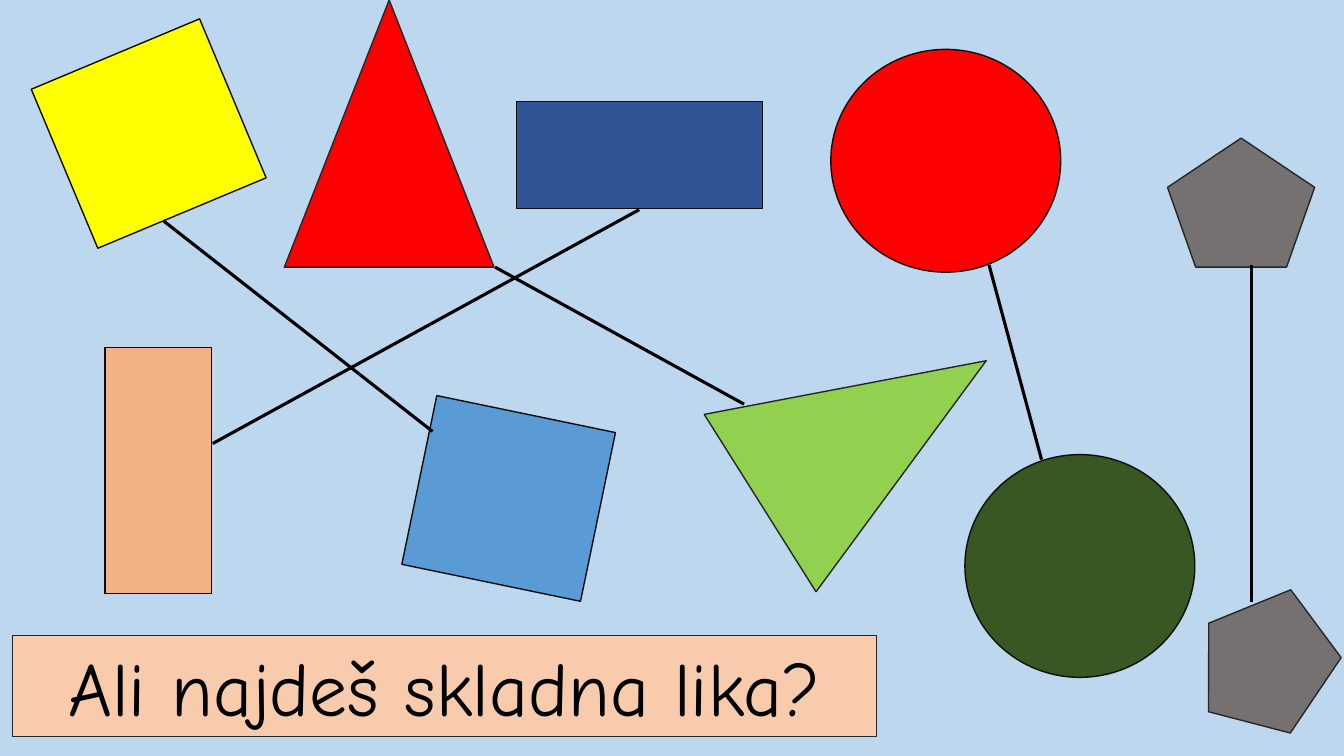
from pptx import Presentation, util as u
from pptx.dml.color import RGBColor
from pptx.enum import shapes, text
from pptx.oxml.ns import qn
from lxml import etree

INK, EDGE, SOFT = "000000", "0D0D0D", "262626"
KIND = shapes.MSO_SHAPE


def paint(fmt, color):
    """Give a fill, or the fill of a line, one solid hex colour."""
    fmt.solid()
    fmt.fore_color.rgb = RGBColor.from_string(color)


def write(frame, words, font="Comic Neue", size=54, color=INK):
    frame.word_wrap = False
    frame.auto_size = text.MSO_AUTO_SIZE.NONE
    frame.vertical_anchor = text.MSO_ANCHOR.MIDDLE
    par = frame.paragraphs[0]
    par.alignment = text.PP_ALIGN.CENTER
    run = par.add_run()
    run.text = words
    run.font.name, run.font.size = font, u.Pt(size)
    paint(run.font.fill, color)


class Board:
    """Holds the slide and draws its figures in one style."""

    def __init__(self, deck, back):
        self.slide = deck.slides.add_slide(deck.slide_layouts[5])
        paint(self.slide.background.fill, back)

    def style(self, shape, fill, edge, width):
        paint(shape.fill, fill)
        paint(shape.line.fill, edge)
        shape.line.width = u.Pt(width)

    def title(self, words, box, fill):
        shape = self.slide.shapes.title
        shape.left, shape.top, shape.width, shape.height = map(u.Inches, box)
        self.style(shape, fill, SOFT, 0.75)
        write(shape.text_frame, words)

    def figure(self, kind, spot, size, fill, edge, turn=0):
        shape = self.slide.shapes.add_shape(kind, *map(u.Inches, spot + size))
        shape.rotation = turn
        shape.shadow.inherit = False
        self.style(shape, fill, edge, 1)

    def link(self, start, end):
        line = self.slide.shapes.add_connector(
            shapes.MSO_CONNECTOR.STRAIGHT, *map(u.Inches, start + end))
        paint(line.line.fill, INK)
        line.line.width = u.Pt(2.25)
        etree.SubElement(line._element.spPr, qn("a:effectLst"))


# Each congruent pair: kind, size, edge, then (spot, fill, turn) for both
PAIRS = [
    (KIND.RECTANGLE, (1.81, 1.71), EDGE,
     [((0.57, 0.47), "FFFF00", 337.3), ((4.14, 4.09), "5B9BD5", 11.7)]),
    (KIND.RECTANGLE, (1.06, 2.44), EDGE,
     [((1.04, 3.45), "F4B183", 0), ((5.81, 0.32), "2F5597", 90)]),
    (KIND.OVAL, (2.28, 2.21), EDGE,
     [((8.24, 0.49), "FF0000", 0), ((9.57, 4.51), "385723", 0)]),
    (KIND.ISOSCELES_TRIANGLE, (2.08, 2.65), SOFT,
     [((2.82, 0), "FF0000", 0), ((7.62, 2.96), "92D050", 57.8)]),
    (KIND.REGULAR_PENTAGON, (1.46, 1.28), SOFT,
     [((11.58, 1.37), "767171", 0), ((11.79, 5.9), "767171", 304)]),
]
LINKS = [
    ((4.91, 2.65), (7.38, 4.01)),
    ((1.62, 2.19), (4.29, 4.28)),
    ((2.11, 4.4), (6.34, 2.08)),
    ((9.81, 2.63), (10.33, 4.56)),
    ((12.41, 2.63), (12.41, 5.97)),
]


def main():
    deck = Presentation()
    deck.slide_width, deck.slide_height = u.Inches(13.33), u.Inches(7.5)
    board = Board(deck, "BDD7EE")
    board.title("Ali najdeš skladna lika?", (0.12, 6.3, 8.57, 1.01), "F8CBAD")
    for kind, size, edge, twins in PAIRS:
        for spot, fill, turn in twins:
            board.figure(kind, spot, size, fill, edge, turn)
    for start, end in LINKS:
        board.link(start, end)
    deck.save("out.pptx")


if __name__ == "__main__":
    main()
